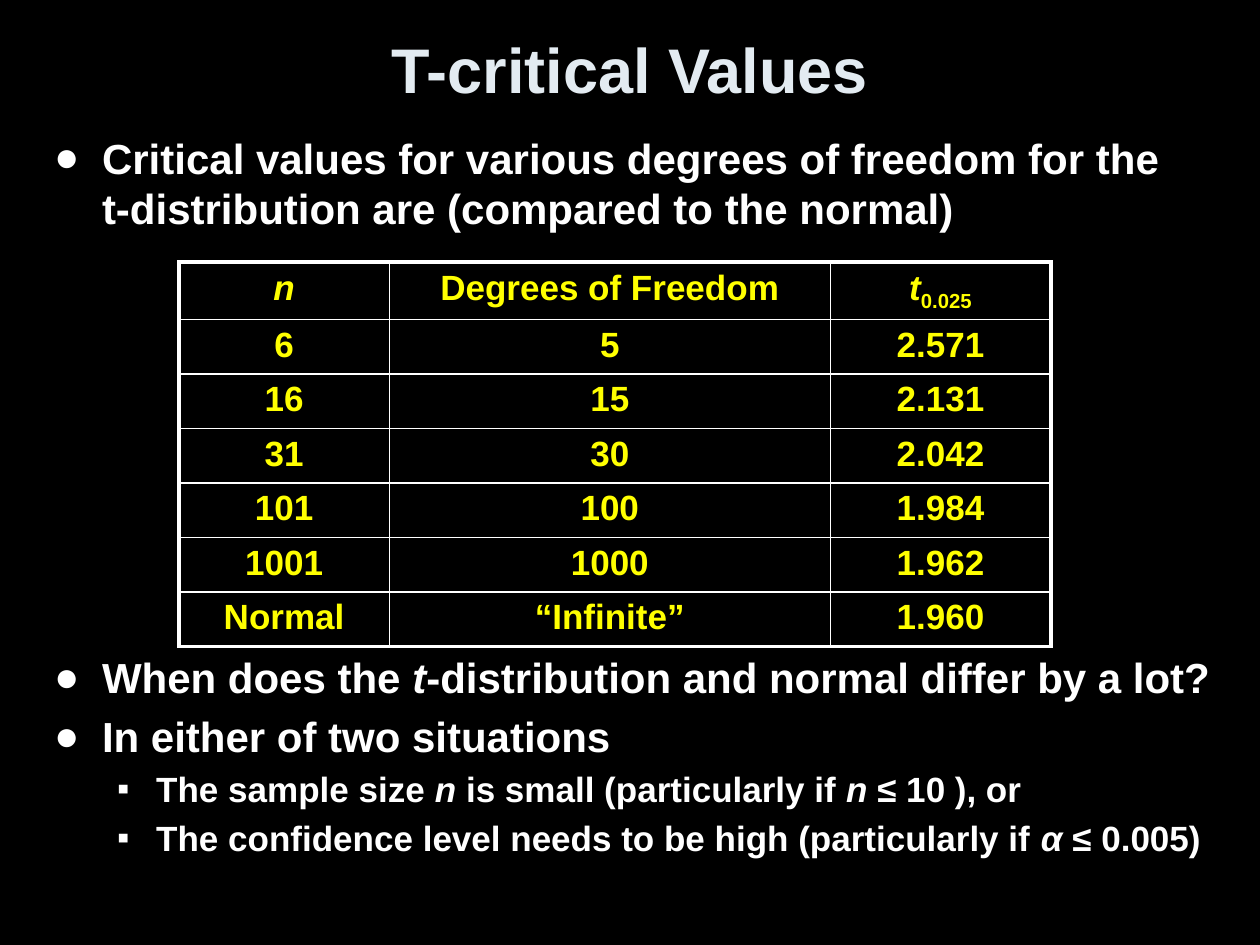
from dataclasses import dataclass

import lxml.etree
import pptx
import pptx.dml.color
import pptx.enum.text
import pptx.oxml.ns
import pptx.util

Inches = pptx.util.Inches
Pt = pptx.util.Pt
CENTER = pptx.enum.text.PP_ALIGN.CENTER


@dataclass(frozen=True)
class Theme:
    font: str = "Arial"
    background: str = "000000"
    title: str = "E3EBF1"
    text: str = "FFFFFF"
    table_text: str = "FFFF00"
    border: str = "FFFFFF"
    title_size: int = 36
    body_size: int = 24
    detail_size: int = 20
    table_size: int = 20
    outer_line: float = 2.25
    inner_line: float = 1


THEME = Theme()

TABLE_ROWS = [
    ("n", "Degrees of Freedom", "t"),
    ("6", "5", "2.571"),
    ("16", "15", "2.131"),
    ("31", "30", "2.042"),
    ("101", "100", "1.984"),
    ("1001", "1000", "1.962"),
    ("Normal", "“Infinite”", "1.960"),
]
COLUMN_WIDTHS = (1.67, 3.5, 1.75)

# Level, space before in points, and runs; odd-numbered runs are italic
TABLE_GAP = 239
BULLETS = [
    (0, 0, ["Critical values for various degrees of freedom for the \v"
            "t-distribution are (compared to the normal)"]),
    (0, TABLE_GAP, ["When does the ", "t",
                    "-distribution and normal differ by a lot?"]),
    (0, 5, ["In either of two situations"]),
    (1, 4, ["The sample size ", "n", " is small (particularly if ", "n",
            " ≤ 10 ), or"]),
    (1, 4, ["The confidence level needs to be high (particularly if ", "α",
            " ≤ 0.005)"]),
]
# Character, left margin and hanging indent of each level
BULLET_STYLES = [("●", 0.38, 0.38), ("▪", 0.81, 0.31)]


def rgb(value):
    return pptx.dml.color.RGBColor.from_string(value)


def add_run(paragraph, text, size, color, italic=False):
    run = paragraph.add_run()
    run.text = text
    font = run.font
    font.name = THEME.font
    font.size = Pt(size)
    font.bold = True
    font.italic = italic
    font.color.rgb = rgb(color)
    return run


def add_element(parent, tag, **attributes):
    return lxml.etree.SubElement(parent, pptx.oxml.ns.qn(tag), attributes)


def place(shape, box):
    shape.left, shape.top, shape.width, shape.height = map(Inches, box)


def set_bullet(paragraph, level):
    character, margin, hanging = BULLET_STYLES[level]
    paragraph.level = level
    properties = paragraph._p.get_or_add_pPr()
    properties.set("marL", str(Inches(margin)))
    properties.set("indent", str(-Inches(hanging)))
    add_element(properties, "a:buChar", char=character)


def fill_title(shape, box):
    place(shape, box)
    frame = shape.text_frame
    frame.auto_size = pptx.enum.text.MSO_AUTO_SIZE.NONE
    frame.vertical_anchor = pptx.enum.text.MSO_ANCHOR.MIDDLE
    paragraph = frame.paragraphs[0]
    paragraph.alignment = CENTER
    add_run(paragraph, "T-critical Values", THEME.title_size, THEME.title)


def fill_body(shape, box):
    place(shape, box)
    frame = shape.text_frame
    frame.auto_size = pptx.enum.text.MSO_AUTO_SIZE.NONE
    for index, (level, space, texts) in enumerate(BULLETS):
        paragraph = frame.add_paragraph() if index else frame.paragraphs[0]
        set_bullet(paragraph, level)
        paragraph.space_before = Pt(space)
        size = THEME.detail_size if level else THEME.body_size
        for position, text in enumerate(texts):
            for line, part in enumerate(text.split("\v")):
                if line:
                    paragraph.add_line_break()
                add_run(paragraph, part, size, THEME.text, position % 2 == 1)


def set_borders(cell, outer_sides):
    properties = cell._tc.get_or_add_tcPr()
    for side in "LRTB":
        width = THEME.outer_line if side in outer_sides else THEME.inner_line
        line = add_element(properties, f"a:ln{side}", w=str(Pt(width)))
        fill = add_element(line, "a:solidFill")
        add_element(fill, "a:srgbClr", val=THEME.border)


def add_values_table(slide, box):
    row_count, column_count = len(TABLE_ROWS), len(COLUMN_WIDTHS)
    table = slide.shapes.add_table(
        row_count, column_count, *map(Inches, box)).table
    for column, width in zip(table.columns, COLUMN_WIDTHS):
        column.width = Inches(width)
    for row_index, values in enumerate(TABLE_ROWS):
        table.rows[row_index].height = Inches(box[3] / row_count)
        for column_index, value in enumerate(values):
            cell = table.cell(row_index, column_index)
            edges = {"L": column_index == 0,
                     "R": column_index == column_count - 1,
                     "T": row_index == 0,
                     "B": row_index == row_count - 1}
            set_borders(cell, [side for side in edges if edges[side]])
            cell.fill.background()
            paragraph = cell.text_frame.paragraphs[0]
            paragraph.alignment = CENTER
            add_run(paragraph, value, THEME.table_size, THEME.table_text,
                    italic=value in ("n", "t"))
            if value == "t":
                subscript = add_run(paragraph, "0.025", THEME.table_size,
                                    THEME.table_text)
                subscript._r.get_or_add_rPr().set("baseline", "-25000")


def main():
    presentation = pptx.Presentation()
    presentation.slide_width = Inches(10)
    presentation.slide_height = Inches(7.5)
    slide = presentation.slides.add_slide(presentation.slide_layouts[1])
    background = slide.background.fill
    background.solid()
    background.fore_color.rgb = rgb(THEME.background)

    # Title, bullets, and the table in the gap between the bullets
    fill_title(slide.shapes.title, (0.5, 0.13, 9, 0.83))
    fill_body(slide.placeholders[1], (0.33, 1, 9.42, 6.42))
    add_values_table(slide, (1.42, 2.08, sum(COLUMN_WIDTHS), 3.03))
    presentation.save("out.pptx")


if __name__ == "__main__":
    main()
